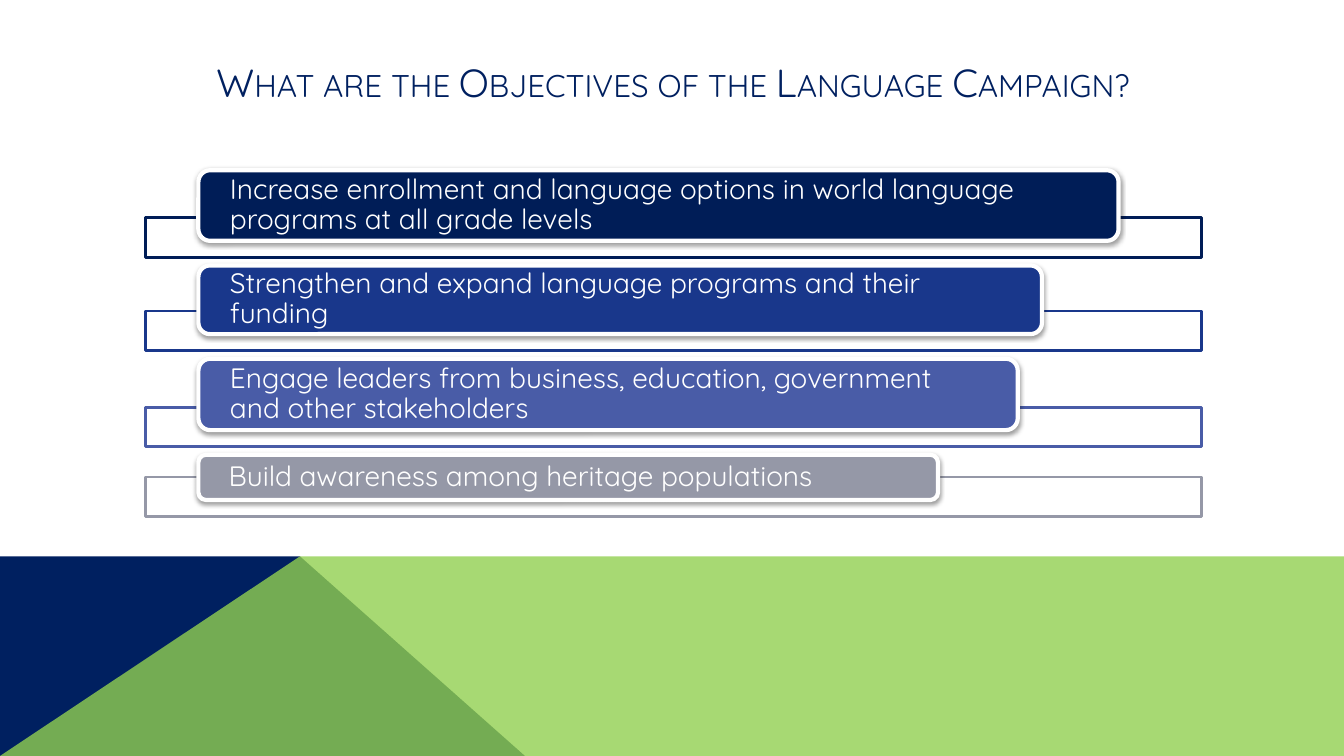
from lxml.etree import SubElement
from pptx import Presentation
from pptx.dml.color import RGBColor
from pptx.enum.shapes import MSO_SHAPE
from pptx.enum.text import MSO_ANCHOR, PP_ALIGN
from pptx.oxml.ns import qn
from pptx.util import Cm, Pt

FONT = "Quicksand"
WHITE = RGBColor(0xFF, 0xFF, 0xFF)
NAVY = RGBColor(0x00, 0x20, 0x60)
GREEN = RGBColor(0x92, 0xD0, 0x50)

SLIDE_WIDTH, SLIDE_HEIGHT = 33.87, 19.05

# Text, bar width and height in cm, colour
OBJECTIVES = [
    ("Increase enrollment and language options in world language programs at all grade levels",
     23.19, 1.78, RGBColor(0x00, 0x1D, 0x57)),
    ("Strengthen and expand language programs and their funding",
     21.26, 1.73, RGBColor(0x19, 0x37, 0x8B)),
    ("Engage leaders from business, education, government and other stakeholders",
     20.65, 1.8, RGBColor(0x49, 0x5C, 0xA7)),
    ("Build awareness among heritage populations",
     18.64, 1.14, RGBColor(0x95, 0x98, 0xA7)),
]


def set_opacity(shape, percent):
    color = shape.fill._xPr.find(qn("a:solidFill"))[0]
    SubElement(color, qn("a:alpha"), val=str(percent * 1000))


def add_soft_shadow(shape):
    effects = shape._element.spPr.find(qn("a:effectLst"))
    shadow = SubElement(effects, qn("a:outerShdw"), blurRad="40000", dist="20000",
                        dir="5400000", rotWithShape="0")
    color = SubElement(shadow, qn("a:srgbClr"), val="000000")
    SubElement(color, qn("a:alpha"), val="38000")


def write_text(frame, text, size, color, align):
    frame.word_wrap = True
    frame.vertical_anchor = MSO_ANCHOR.MIDDLE
    frame.margin_top = frame.margin_bottom = 0
    para = frame.paragraphs[0]
    para.alignment = align
    span = para.add_run()
    span.text = text
    span.font.name = FONT
    span.font.size = Pt(size)
    span.font.color.rgb = color
    return para, span


def add_block(page, kind, left, top, width, height, fill, line, line_width):
    block = page.shapes.add_shape(kind, Cm(left), Cm(top), Cm(width), Cm(height))
    block.shadow.inherit = False
    block.fill.solid()
    block.fill.fore_color.rgb = fill
    block.line.color.rgb = line
    block.line.width = Pt(line_width)
    return block


def add_polygon(page, points, color):
    corners = [(Cm(x), Cm(y)) for x, y in points]
    builder = page.shapes.build_freeform(*corners[0])
    builder.add_line_segments(corners[1:], close=True)
    polygon = builder.convert_to_shape()
    polygon.shadow.inherit = False
    polygon.fill.solid()
    polygon.fill.fore_color.rgb = color
    polygon.line.fill.background()
    return polygon


def add_footer_band(page, left, top, width, height):
    right, bottom = left + width, top + height
    peak = left + 7.56
    add_polygon(page, [(left, bottom), (left, top), (peak, top),
                       (left + 13.23, bottom)], NAVY)
    slope = add_polygon(page, [(left, bottom), (peak, top), (right, top),
                               (right, bottom)], GREEN)
    set_opacity(slope, 80)


def add_title(page, left, top, width, height):
    box = page.shapes.add_textbox(Cm(left), Cm(top), Cm(width), Cm(height))
    para, span = write_text(box.text_frame, "What are the Objectives of the Language Campaign?",
                            28, NAVY, PP_ALIGN.CENTER)
    span.font._element.set("cap", "small")


def add_objectives(page, left, top, width):
    indent, frame_height, overhang, gap = 1.34, 1, 0.42, 0.2
    for text, bar_width, bar_height, color in OBJECTIVES:
        # Outlined frame that reaches below the bar
        bottom = top + bar_height + overhang
        frame = add_block(page, MSO_SHAPE.RECTANGLE, left, bottom - frame_height,
                          width, frame_height, WHITE, color, 2)
        set_opacity(frame, 90)
        # Rounded bar with the objective
        bar = add_block(page, MSO_SHAPE.ROUNDED_RECTANGLE, left + indent, top,
                        bar_width, bar_height, color, WHITE, 3)
        add_soft_shadow(bar)
        bar.text_frame.margin_left = bar.text_frame.margin_right = Cm(0.71)
        para, span = write_text(bar.text_frame, text, 20, WHITE, PP_ALIGN.LEFT)
        para.line_spacing = 0.9
        top = bottom + gap


def main():
    deck = Presentation()
    deck.slide_width, deck.slide_height = Cm(SLIDE_WIDTH), Cm(SLIDE_HEIGHT)
    page = deck.slides.add_slide(deck.slide_layouts[6])
    add_footer_band(page, 0, 14.02, SLIDE_WIDTH, SLIDE_HEIGHT - 14.02)
    add_title(page, 1.98, 1.3, 29.97, 1.52)
    add_objectives(page, 3.66, 4.29, 26.62)
    deck.save("out.pptx")


if __name__ == "__main__":
    main()
